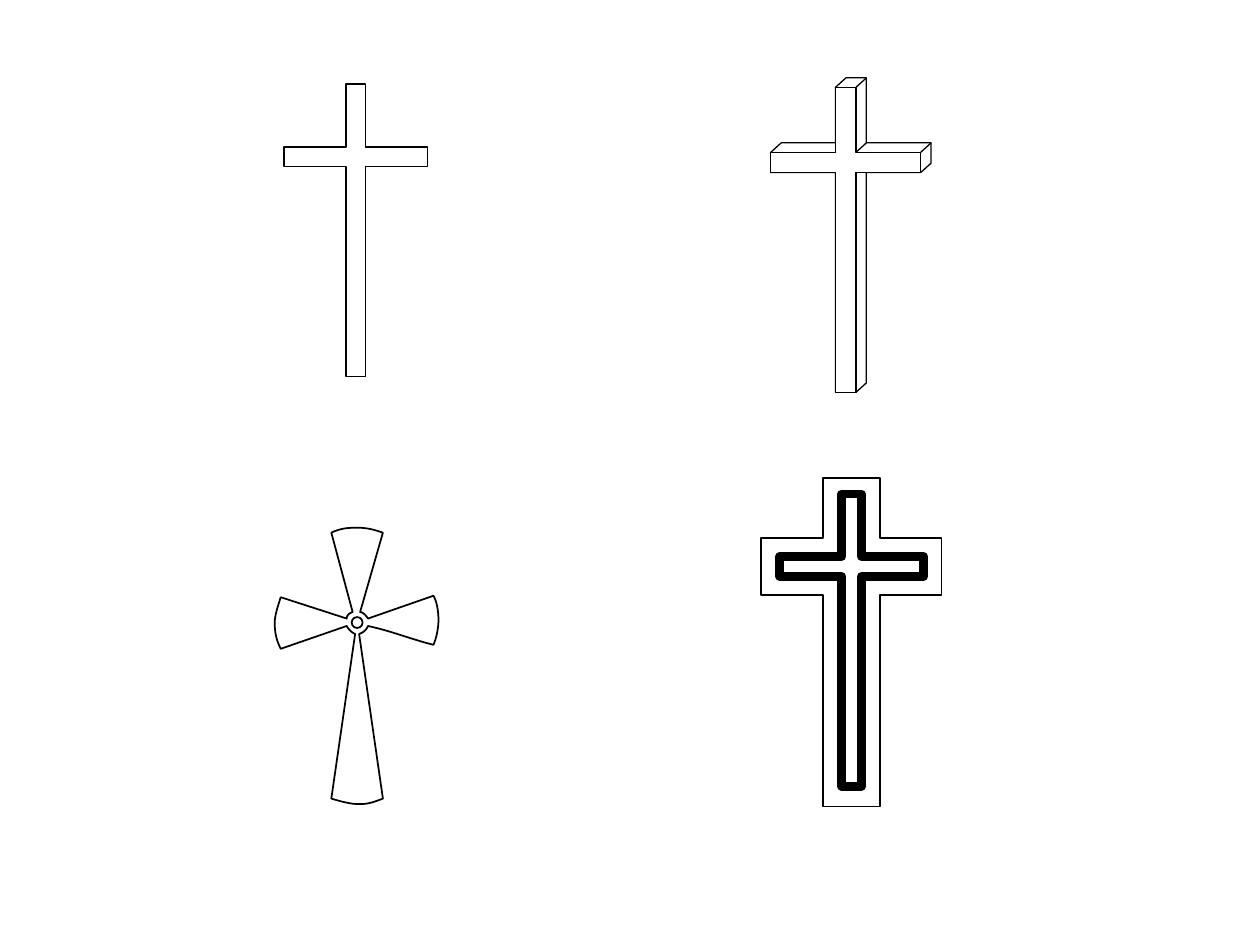
import pptx
import pptx.dml.color
import pptx.enum.shapes
import pptx.oxml
import pptx.oxml.ns
import pptx.util

Cm = pptx.util.Cm
BLACK, WHITE = "000000", "FFFFFF"

FLARED_START = (8.74, 13.0)
FLARED_SEGMENTS = [
    [(8.81, 12.83), (8.84, 12.65), (8.84, 12.5)],
    [(8.84, 12.32), (8.81, 12.14), (8.74, 12.01)],
    [(7.42, 12.47)],
    [(7.42, 12.47), (7.34, 12.34), (7.26, 12.34)],
    [(7.72, 10.74)],
    [(7.52, 10.67), (7.39, 10.64), (7.21, 10.64)],
    [(7.06, 10.64), (6.88, 10.64), (6.68, 10.74)],
    [(7.11, 12.34)],
    [(7.11, 12.34), (6.99, 12.37), (6.99, 12.47)],
    [(5.66, 12.04)],
    [(5.64, 12.12), (5.54, 12.37), (5.54, 12.55)],
    [(5.54, 12.73), (5.56, 12.88), (5.66, 13.08)],
    [(6.99, 12.62)],
    [(6.99, 12.62), (7.04, 12.73), (7.16, 12.78)],
    [(6.68, 16.1)],
    [(6.78, 16.13), (7.04, 16.21), (7.21, 16.21)],
    [(7.37, 16.21), (7.44, 16.21), (7.72, 16.1)],
    [(7.24, 12.78)],
    [(7.24, 12.78), (7.37, 12.75), (7.42, 12.62)],
    [(7.92, 12.73), (8.26, 12.88), (8.74, 13.0)],
]


def color(value):
    return pptx.dml.color.RGBColor.from_string(value)


def set_line(sp, weight):
    sp.line.color.rgb = color(BLACK)
    sp.line.width = pptx.util.Pt(weight)


def style(sp, weight, fill=None):
    sp.shadow.inherit = False
    if fill:
        sp.fill.solid()
        sp.fill.fore_color.rgb = color(fill)
    else:
        sp.fill.background()
    set_line(sp, weight)
    ln = sp.line._get_or_add_ln()
    ln.append(pptx.oxml.parse_xml(
        f'<a:round {pptx.oxml.ns.nsdecls("a")}/>'))


def add_outline(shapes, points, weight, fill=None):
    corners = [(Cm(x), Cm(y)) for x, y in points]
    builder = shapes.build_freeform(*corners[0])
    builder.add_line_segments(corners[1:], close=True)
    style(builder.convert_to_shape(), weight, fill)


def add_edge(shapes, x1, y1, x2, y2, weight):
    cxn = shapes.add_connector(pptx.enum.shapes.MSO_CONNECTOR.STRAIGHT,
                               Cm(x1), Cm(y1), Cm(x2), Cm(y2))
    set_line(cxn, weight)
    cxn._element.spPr.append(pptx.oxml.parse_xml(
        f'<a:effectLst {pptx.oxml.ns.nsdecls("a")}/>'))


def cross_points(left, top, width, height, bar, drop):
    right, bottom = left + width, top + height
    x1 = left + (width - bar) / 2
    x2 = x1 + bar
    y1 = top + drop
    y2 = y1 + bar
    return [(right, y1), (x2, y1), (x2, top), (x1, top), (x1, y1), (left, y1),
            (left, y2), (x1, y2), (x1, bottom), (x2, bottom), (x2, y2), (right, y2)]


def curve_points(start, segments, steps=10):
    points = [start]
    for segment in segments:
        if len(segment) == 1:
            points += segment
            continue
        nodes = list(zip(points[-1], *segment))
        for i in range(1, steps + 1):
            t = i / steps
            weights = ((1 - t) ** 3, 3 * t * (1 - t) ** 2, 3 * t * t * (1 - t), t ** 3)
            points.append(tuple(sum(w * n for w, n in zip(weights, axis))
                                for axis in nodes))
    return points


def add_bordered_cross(shapes):
    add_outline(shapes, cross_points(15.34, 9.63, 3.64, 6.63, 1.15, 1.22), 1, WHITE)
    add_outline(shapes, cross_points(15.72, 9.96, 2.9, 5.89, 0.4, 1.26), 5)


def add_flared_cross(shapes):
    add_outline(shapes, curve_points(FLARED_START, FLARED_SEGMENTS), 1)
    hub = shapes.add_shape(pptx.enum.shapes.MSO_SHAPE.OVAL,
                           Cm(7.09), Cm(12.44), Cm(0.22), Cm(0.22))
    style(hub, 1, WHITE)


def add_solid_cross(shapes):
    dx, dy, weight = 0.21, 0.19, 0.75
    front = cross_points(15.54, 1.76, 3.02, 6.15, 0.41, 1.31)
    back = [(x + dx, y - dy) for x, y in front]
    (x1, y1) = front[4]
    sides = [back[0], back[1], back[2], back[3], front[3], (x1, y1 - dy),
             back[5], front[5], front[6], front[7], front[8], front[9],
             back[9], (back[10][0], front[10][1]), front[11], back[11]]
    add_outline(shapes, sides, weight, WHITE)
    add_outline(shapes, front, weight, WHITE)
    for corner in (2, 1, 0):
        add_edge(shapes, *front[corner], *back[corner], weight)


def main():
    prs = pptx.Presentation()
    prs.slide_width, prs.slide_height = Cm(25.4), Cm(19.05)
    s = prs.slides.add_slide(prs.slide_layouts[6])
    add_outline(s.shapes, cross_points(5.72, 1.7, 2.9, 5.89, 0.4, 1.26), 1)
    for add_cross in (add_bordered_cross, add_flared_cross, add_solid_cross):
        add_cross(s.shapes.add_group_shape().shapes)
    prs.save("out.pptx")


if __name__ == "__main__":
    main()
